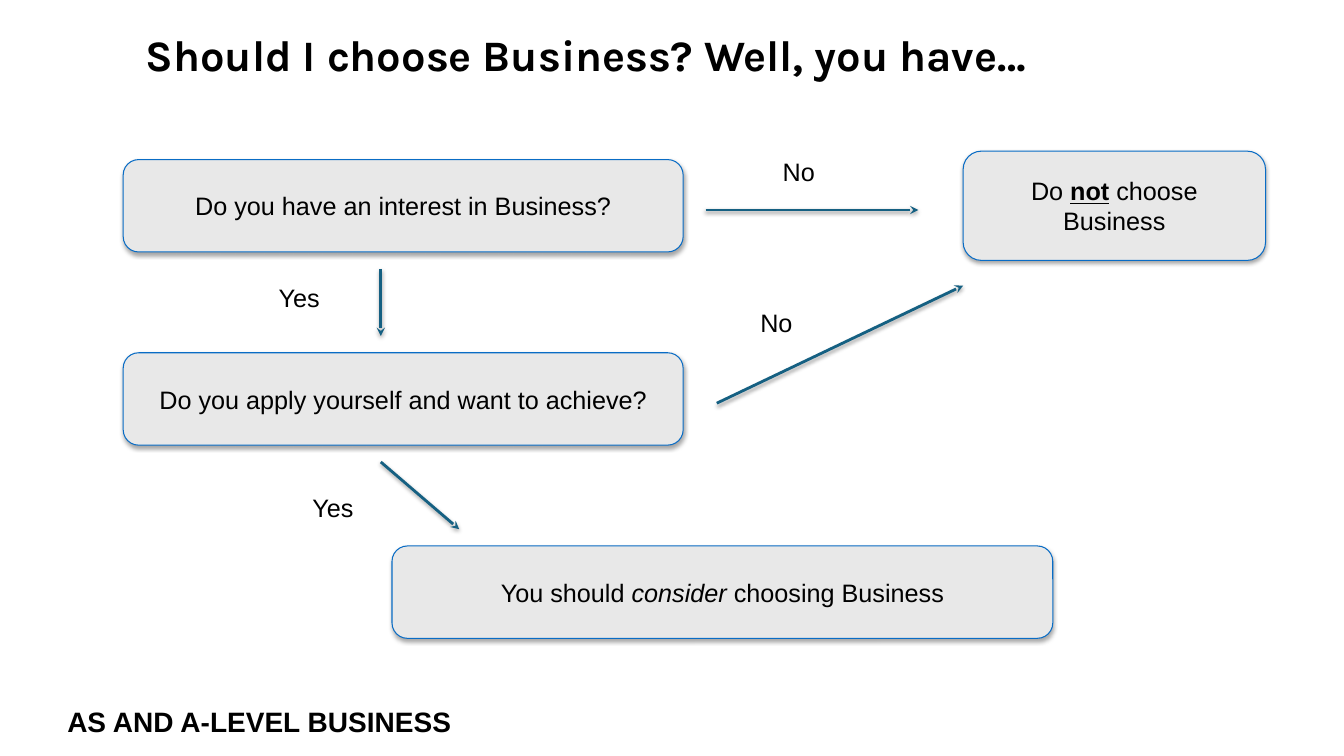
from dataclasses import dataclass

from lxml.etree import SubElement
from pptx import Presentation
from pptx.dml.color import RGBColor
from pptx.enum.shapes import MSO_CONNECTOR as Connector, MSO_SHAPE as Preset
from pptx.enum.text import MSO_ANCHOR as Anchor, PP_ALIGN as Align
from pptx.oxml.ns import qn
from pptx.slide import Slide
from pptx.util import Pt

COLOURS = {"text": "000000", "box": "E8E8E8", "border": "096CC5", "arrow": "156082"}
STEP_WIDTH, STEP_HEIGHT = 400, 66
LABEL_WIDTH, LABEL_HEIGHT = 72, 29


@dataclass(frozen=True)
class Piece:
    text: str
    bold: bool = False
    italic: bool = False
    underline: bool = False


@dataclass(frozen=True)
class Step:
    left: float
    top: float
    pieces: tuple[Piece, ...]
    width: float = STEP_WIDTH
    height: float = STEP_HEIGHT


@dataclass(frozen=True)
class Arrow:
    start: tuple[float, float]
    end: tuple[float, float]


@dataclass(frozen=True)
class Caption:
    text: str
    left: float
    top: float
    width: float = LABEL_WIDTH
    height: float = LABEL_HEIGHT
    size: float = 18
    font: str = "Arial"
    bold: bool = False
    anchor: Anchor = Anchor.TOP
    line_spacing: float = 1.0


STEPS = [
    Step(88, 114, (Piece("Do you have an interest in Business?"),)),
    Step(688, 108, (Piece("Do "), Piece("not", bold=True, underline=True),
                    Piece(" choose Business")), width=216, height=78),
    Step(88, 252, (Piece("Do you apply yourself and want to achieve?"),)),
    Step(280, 390, (Piece("You should "), Piece("consider ", italic=True),
                    Piece("choosing Business")), width=472),
]
ARROWS = [
    Arrow((504, 150), (656, 150)),
    Arrow((272, 192), (272, 240)),
    Arrow((272, 330), (328, 378)),
    Arrow((512, 288), (688, 204)),
]
CAPTIONS = [
    Caption("AS AND A-LEVEL BUSINESS", 41, 500, 396, 32, size=20, bold=True),
    Caption("Should I choose Business? Well, you have…", 97, 12, 863, 58, size=31,
            font="Karla", bold=True, anchor=Anchor.MIDDLE, line_spacing=0.9),
    Caption("Yes", 216, 348),
    Caption("Yes", 192, 198),
    Caption("No", 552, 108),
    Caption("No", 536, 216),
]


def colour(name: str) -> RGBColor:
    return RGBColor.from_string(COLOURS[name])


def add_shadow(shape, distance: float, opacity: int) -> None:
    effects = SubElement(shape.element.spPr, qn("a:effectLst"))
    shadow = SubElement(effects, qn("a:outerShdw"), blurRad=str(Pt(3.1)),
                        dist=str(Pt(distance)), dir="5400000", rotWithShape="0")
    shade = SubElement(shadow, qn("a:srgbClr"), val=COLOURS["text"])
    SubElement(shade, qn("a:alpha"), val=str(opacity * 1000))


def format_run(run, size: float, font: str, bold: bool) -> None:
    run.font.size = Pt(size)
    run.font.name = font
    run.font.bold = bold
    run.font.color.rgb = colour("text")


def draw_step(page: Slide, step: Step) -> None:
    box = page.shapes.add_shape(Preset.ROUNDED_RECTANGLE, Pt(step.left), Pt(step.top),
                                Pt(step.width), Pt(step.height))
    box.fill.solid()
    box.fill.fore_color.rgb = colour("box")
    box.line.color.rgb = colour("border")
    box.line.width = Pt(0.75)
    add_shadow(box, distance=1.8, opacity=35)
    box.text_frame.word_wrap = True
    box.text_frame.vertical_anchor = Anchor.MIDDLE
    para = box.text_frame.paragraphs[0]
    para.alignment = Align.CENTER
    for piece in step.pieces:
        span = para.add_run()
        span.text = piece.text
        format_run(span, 18, "Arial", piece.bold)
        span.font.italic = piece.italic
        span.font.underline = piece.underline


def draw_arrow(page: Slide, arrow: Arrow) -> None:
    line = page.shapes.add_connector(Connector.STRAIGHT, *map(Pt, arrow.start + arrow.end))
    line.line.color.rgb = colour("arrow")
    line.line.width = Pt(2)
    SubElement(line.element.spPr.find(qn("a:ln")), qn("a:tailEnd"), type="stealth")
    add_shadow(line, distance=1.6, opacity=38)


def draw_caption(page: Slide, caption: Caption) -> None:
    box = page.shapes.add_textbox(Pt(caption.left), Pt(caption.top),
                                  Pt(caption.width), Pt(caption.height))
    box.text_frame.word_wrap = True
    box.text_frame.vertical_anchor = caption.anchor
    box.text_frame.text = caption.text
    para = box.text_frame.paragraphs[0]
    para.line_spacing = caption.line_spacing
    format_run(para.runs[0], caption.size, caption.font, caption.bold)


def main() -> None:
    deck = Presentation()
    deck.slide_width, deck.slide_height = Pt(960), Pt(540)
    page = deck.slides.add_slide(deck.slide_layouts[6])
    for step in STEPS:
        draw_step(page, step)
    for arrow in ARROWS:
        draw_arrow(page, arrow)
    for caption in CAPTIONS:
        draw_caption(page, caption)
    deck.save("out.pptx")


if __name__ == "__main__":
    main()
